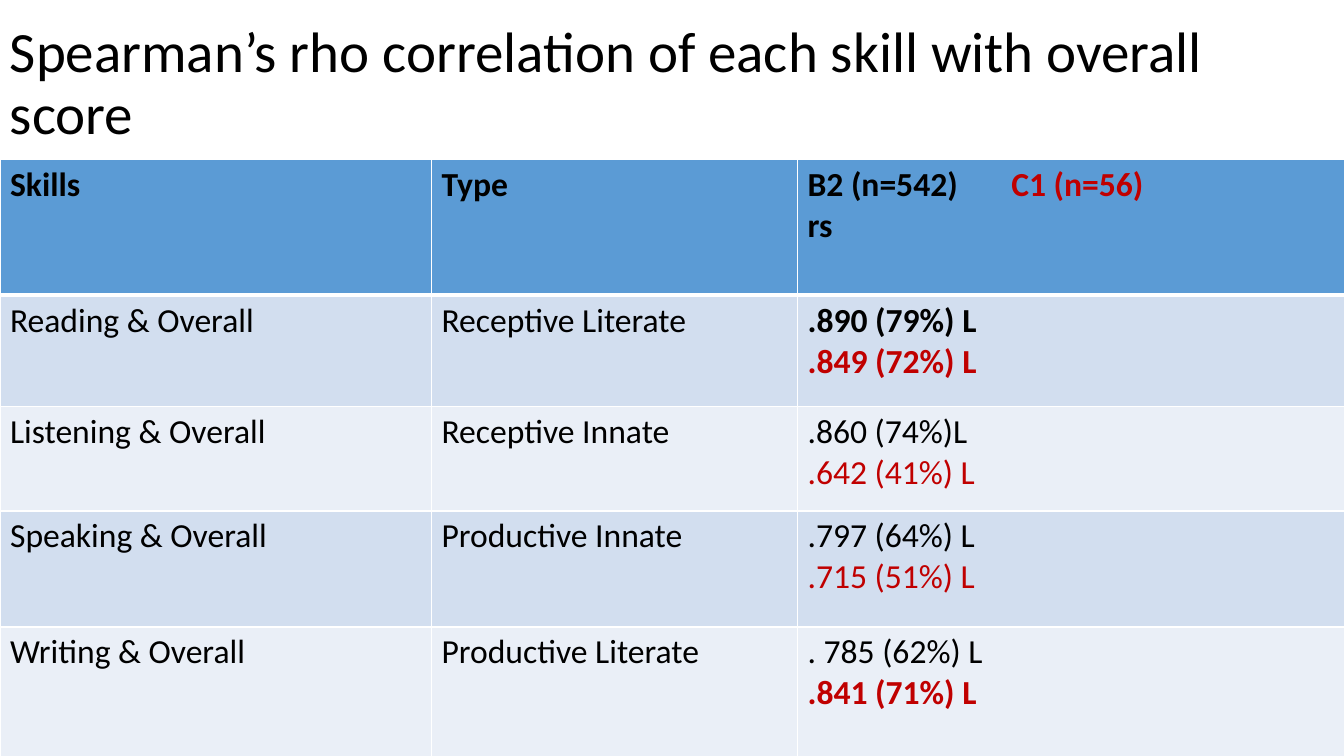
import pptx
import pptx.dml.color
import pptx.enum.text
import pptx.oxml
import pptx.oxml.ns
import pptx.util

Inches = pptx.util.Inches
Pt = pptx.util.Pt

COLORS = {"ink": "000000", "red": "C00000", "head": "5B9BD5",
          "odd": "D2DEEF", "even": "EAEFF7", "line": "FFFFFF"}
WIDTHS = [4.28, 3.63, 5.43]
HEIGHTS = [1.35, 1.1, 1.04, 1.15, 1.57]
TAB = 2.02

# Skill, type, B2 value, B2 bold, C1 value, C1 bold
SKILLS = [
    ("Reading & Overall", "Receptive Literate", ".890 (79%) L", True, ".849 (72%) L", True),
    ("Listening & Overall", "Receptive Innate", ".860 (74%)L", False, ".642 (41%) L", False),
    ("Speaking & Overall", "Productive Innate", ".797 (64%) L", False, ".715 (51%) L", False),
    ("Writing & Overall", "Productive Literate", ". 785 (62%) L", False, ".841 (71%) L", True),
]


def rgb(name):
    return pptx.dml.color.RGBColor.from_string(COLORS[name])


def plain(text, bold=False):
    """One paragraph holding one black run."""
    return [[(text, "ink", bold)]]


class Deck:
    def __init__(self, width, height):
        self.style = {"name": "Calibri", "size": Pt(24)}
        self.file = pptx.Presentation()
        self.file.slide_width = Inches(width)
        self.file.slide_height = Inches(height)
        self.slide = self.file.slides.add_slide(self.file.slide_layouts[6])

    def text(self, frame, paras, **extra):
        """Fill a text frame with paragraphs of (text, colour, bold) runs."""
        for i, runs in enumerate(paras):
            para = frame.add_paragraph() if i else frame.paragraphs[0]
            for words, color, bold in runs:
                run = para.add_run()
                run.text = words
                for key, value in {**self.style, "bold": bold, **extra}.items():
                    setattr(run.font, key, value)
                run.font.color.rgb = rgb(color)

    def title(self, words, box, size):
        frame = self.slide.shapes.add_textbox(*map(Inches, box)).text_frame
        form = {"word_wrap": True,
                "vertical_anchor": pptx.enum.text.MSO_ANCHOR.MIDDLE}
        for key, value in form.items():
            setattr(frame, key, value)
        self.text(frame, plain(words), size=Pt(size))
        frame.paragraphs[0].line_spacing = 0.9

    def edge(self, cell, sides):
        """Draw the cell's borders; sides maps L, R, T, B to points."""
        props = cell._tc.get_or_add_tcPr()
        for side, width in sides.items():
            props.append(pptx.oxml.parse_xml(
                f'<a:ln{side} {pptx.oxml.ns.nsdecls("a")} w="{Pt(width)}">'
                f'<a:solidFill><a:srgbClr val="{COLORS["line"]}"/></a:solidFill>'
                f'</a:ln{side}>'))

    def tab(self, para, pos):
        props = para._p.get_or_add_pPr()
        props.append(pptx.oxml.parse_xml(
            f'<a:tabLst {pptx.oxml.ns.nsdecls("a")}>'
            f'<a:tab pos="{Inches(pos)}" algn="l"/></a:tabLst>'))

    def table(self, rows, left, top):
        box = (left, top, sum(WIDTHS), sum(HEIGHTS))
        grid = self.slide.shapes.add_table(
            len(rows), len(WIDTHS), *map(Inches, box)).table
        for col, width in zip(grid.columns, WIDTHS):
            col.width = Inches(width)
        for r, (row, height) in enumerate(zip(rows, HEIGHTS)):
            grid.rows[r].height = Inches(height)
            shade = "head" if r == 0 else ("even", "odd")[r % 2]
            for c, paras in enumerate(row):
                cell = grid.cell(r, c)
                self.edge(cell, {"L": 1, "R": 1, "T": 3 if r == 1 else 1,
                                 "B": 3 if r == 0 else 1})
                cell.fill.solid()
                cell.fill.fore_color.rgb = rgb(shade)
                self.text(cell.text_frame, paras)
        return grid


def main():
    deck = Deck(13.33, 7.5)
    head = [plain("Skills", True), plain("Type", True),
            [[("B2 (n=542)\t", "ink", True), ("C1 (n=56)", "red", True)],
             [("rs", "ink", True)]]]
    body = [[plain(skill), plain(kind),
             [[(b2, "ink", bold2)], [(c1, "red", bold1)]]]
            for skill, kind, b2, bold2, c1, bold1 in SKILLS]
    grid = deck.table([head] + body, 0, 1.58)
    deck.tab(grid.cell(0, 2).text_frame.paragraphs[0], TAB)
    deck.title("Spearman’s rho correlation of each skill with overall score",
               (0, 0.23, 13.33, 1.23), 40.7)
    deck.file.save("out.pptx")


if __name__ == "__main__":
    main()
